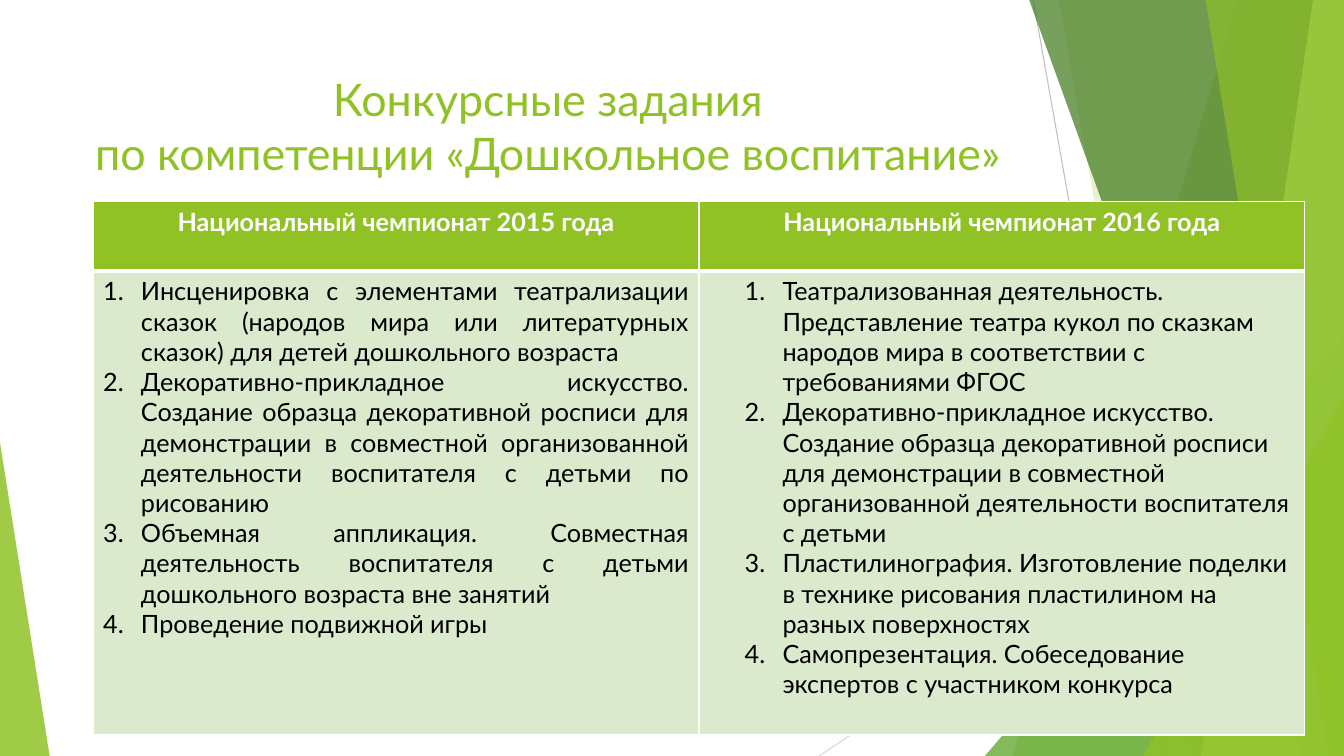
import pptx
import pptx.util
import pptx.dml.color
import pptx.enum.shapes
import pptx.enum.text
import pptx.oxml
import pptx.oxml.ns
from lxml import etree

Pt = pptx.util.Pt
qn = pptx.oxml.ns.qn
Align = pptx.enum.text.PP_ALIGN
Shape = pptx.enum.shapes.MSO_SHAPE

FONT = "Lato"
COLORS = {
    "lime": "90C226", "green": "54A021", "forest": "3F7819", "pale": "C0E474",
    "mint": "DBE9CD", "white": "FFFFFF", "black": "000000",
    "gray": "BFBFBF", "silver": "D9D9D9",
}
TITLE = ["Конкурсные задания", "по компетенции «Дошкольное воспитание»"]
# heading, alignment, left indent, tasks
COLUMNS = [
    ("Национальный чемпионат 2015 года", Align.JUSTIFY, 27, [
        "Инсценировка с элементами театрализации сказок (народов мира или "
        "литературных сказок) для детей дошкольного возраста",
        "Декоративно-прикладное искусство. Создание образца декоративной росписи "
        "для демонстрации в совместной организованной деятельности воспитателя "
        "с детьми по рисованию",
        "Объемная аппликация. Совместная деятельность воспитателя с детьми "
        "дошкольного возраста вне занятий",
        "Проведение подвижной игры",
    ]),
    ("Национальный чемпионат 2016 года", Align.LEFT, 52.5, [
        "Театрализованная деятельность. Представление театра кукол по сказкам "
        "народов мира в соответствии с требованиями ФГОС",
        "Декоративно-прикладное искусство. Создание образца декоративной росписи "
        "для демонстрации в совместной организованной деятельности воспитателя "
        "с детьми",
        "Пластилинография. Изготовление поделки в технике рисования пластилином "
        "на разных поверхностях",
        "Самопрезентация. Собеседование экспертов с участником конкурса",
    ]),
]
WIDE, HIGH = 960, 540
LINES = [((738, 0), (834, HIGH), "gray"), ((WIDE, 290), (585, HIGH), "silver")]
# Bands reach the right edge: top x, bottom x, color, opacity
# Wedges stand on the bottom edge: left, top, width, apex, color, opacity
DECOR = [
    ("band", 884, 723, "lime", 30),
    ("band", 756, 852, "lime", 20),
    ("wedge", 703.5, 240, 256.5, 1, "green", 72),
    ("band", 735, 930, "forest", 70),
    ("band", 938, 858, "pale", 70),
    ("band", 861, 949, "lime", 65),
    ("wedge", 816.5, 283, 143.5, 1, "lime", 80),
    ("wedge", 0, 316, 35.5, 0, "lime", 85),
]


def tint(fill, color):
    fill.solid()
    fill.fore_color.rgb = pptx.dml.color.RGBColor.from_string(COLORS[color])


def draw_line(shapes, start, end, color):
    line = shapes.add_connector(pptx.enum.shapes.MSO_CONNECTOR.STRAIGHT,
                                *map(Pt, start + end))
    tint(line.line.fill, color)
    line.line.width = Pt(0.75)
    etree.SubElement(line._element.spPr, qn("a:effectLst"))


def finish(shape, color, alpha):
    """Give a plain see-through fill."""
    shape.shadow.inherit = False
    shape.line.fill.background()
    tint(shape.fill, color)
    tone = shape._element.spPr.find(qn("a:solidFill"))[0]
    etree.SubElement(tone, qn("a:alpha"), val=str(alpha * 1000))


def draw_band(shapes, top, base, color, alpha):
    form = shapes.build_freeform(Pt(top), Pt(-0.6))
    form.add_line_segments([(Pt(x), Pt(y)) for x, y in
                            [(WIDE, -0.6), (WIDE, HIGH), (base, HIGH)]])
    finish(form.convert_to_shape(), color, alpha)


def draw_wedge(shapes, left, top, width, apex, color, alpha):
    wedge = shapes.add_shape(Shape.ISOSCELES_TRIANGLE, Pt(left), Pt(top),
                             Pt(width), Pt(HIGH - top))
    wedge.adjustments[0] = apex
    finish(wedge, color, alpha)


def write(para, text, size, color, bold=False):
    run = para.add_run()
    run.text = text
    run.font.name = FONT
    run.font.size = Pt(size)
    run.font.bold = bold
    tint(run.font.fill, color)


def count(para, left):
    """Number the paragraph with a hanging indent."""
    props = para._p.get_or_add_pPr()
    props.set("marL", str(Pt(left)))
    props.set("indent", str(Pt(-27)))
    etree.SubElement(props, qn("a:buFont"), typeface="+mj-lt")
    etree.SubElement(props, qn("a:buAutoNum"), type="arabicPeriod")


def edge(cell, top, base):
    """Set white borders, with given top and bottom widths."""
    props = cell._tc.get_or_add_tcPr()
    sides = [("lnL", 1), ("lnR", 1), ("lnT", top), ("lnB", base)]
    for place, (side, width) in enumerate(sides):
        line = etree.Element(qn("a:" + side), w=str(Pt(width)))
        fill = etree.SubElement(line, qn("a:solidFill"))
        etree.SubElement(fill, qn("a:srgbClr"), val=COLORS["white"])
        props.insert(place, line)


def draw_title(shapes):
    frame = shapes.add_textbox(Pt(53), Pt(48), Pt(677), Pt(104)).text_frame
    frame.word_wrap = True
    para = frame.paragraphs[0]
    para.alignment = Align.CENTER
    for i, text in enumerate(TITLE):
        if i:
            para.add_line_break()
        write(para, text, 32, "lime")


def draw_table(shapes):
    heights = [49.5, 331.5]
    table = shapes.add_table(2, len(COLUMNS), Pt(66.5), Pt(144), Pt(865.5),
                             Pt(sum(heights))).table
    for row, height in zip(table.rows, heights):
        row.height = Pt(height)
    for i, (name, align, left, tasks) in enumerate(COLUMNS):
        head, body = table.cell(0, i), table.cell(1, i)
        tint(head.fill, "lime")
        edge(head, 1, 3)
        para = head.text_frame.paragraphs[0]
        para.alignment = Align.CENTER
        write(para, name, 18, "white", True)
        tint(body.fill, "mint")
        edge(body, 3, 1)
        frame = body.text_frame
        for j, task in enumerate(tasks):
            para = frame.add_paragraph() if j else frame.paragraphs[0]
            para.alignment = align
            count(para, left)
            write(para, task, 18, "black")


def main():
    deck = pptx.Presentation()
    deck.slide_width, deck.slide_height = Pt(WIDE), Pt(HIGH)
    shapes = deck.slides.add_slide(deck.slide_layouts[6]).shapes
    for line in LINES:
        draw_line(shapes, *line)
    makers = {"band": draw_band, "wedge": draw_wedge}
    for kind, *data in DECOR:
        makers[kind](shapes, *data)
    draw_title(shapes)
    draw_table(shapes)
    deck.save("out.pptx")


if __name__ == "__main__":
    main()
